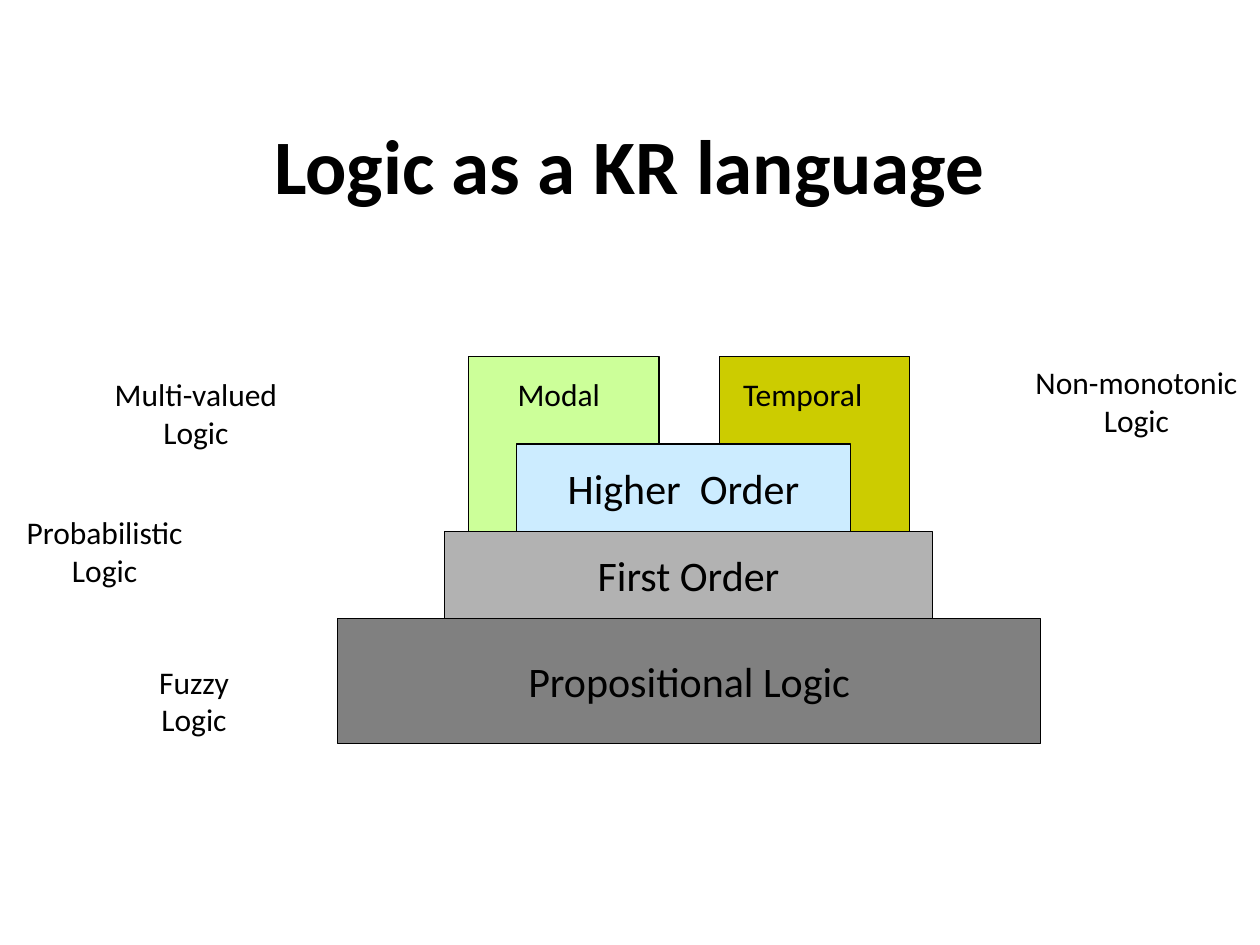
from pptx import Presentation
from pptx.dml.color import RGBColor
from pptx.enum.shapes import MSO_SHAPE as Shape
from pptx.enum.text import MSO_ANCHOR as Anchor, MSO_AUTO_SIZE as AutoSize, PP_ALIGN as Align
from pptx.util import Inches, Pt

BLACK = RGBColor(0x00, 0x00, 0x00)
OLIVE = RGBColor(0xCC, 0xCC, 0x00)
LIME = RGBColor(0xCC, 0xFF, 0x99)
DARK_GRAY = RGBColor(0x80, 0x80, 0x80)
LIGHT_GRAY = RGBColor(0xB2, 0xB2, 0xB2)
SKY = RGBColor(0xCC, 0xEC, 0xFF)

COLUMNS, ROWS = 100, 75  # page grid


def write(frame, text, size=18, bold=False, align=Align.CENTER,
          anchor=Anchor.TOP, wrap=False):
    """Fill a text frame, one paragraph per line of text."""
    frame.word_wrap = wrap
    frame.vertical_anchor = anchor
    for index, line in enumerate(text.split("\n")):
        para = frame.paragraphs[0] if index == 0 else frame.add_paragraph()
        para.alignment = align
        span = para.add_run()
        span.text = line
        span.font.name = "Calibri"
        span.font.size = Pt(size)
        span.font.bold = bold
        span.font.color.rgb = BLACK


class Page:
    """The current slide and its style, measured in grid columns and rows."""

    def __init__(self, deck):
        self.slide = deck.slides.add_slide(deck.slide_layouts[6])
        self.column = deck.slide_width / COLUMNS
        self.row = deck.slide_height / ROWS

    def area(self, left, top, width, height):
        return (round(left * self.column), round(top * self.row),
                round(width * self.column), round(height * self.row))

    def title(self, text, *area):
        box = self.slide.shapes.add_textbox(*self.area(*area))
        write(box.text_frame, text, size=44, bold=True, anchor=Anchor.MIDDLE, wrap=True)

    def label(self, text, *area, align=Align.CENTER):
        box = self.slide.shapes.add_textbox(*self.area(*area))
        write(box.text_frame, text, align=align)
        box.text_frame.auto_size = AutoSize.SHAPE_TO_FIT_TEXT

    def block(self, color, *area, text=""):
        box = self.slide.shapes.add_shape(Shape.RECTANGLE, *self.area(*area))
        box.shadow.inherit = False
        box.fill.solid()
        box.fill.fore_color.rgb = color
        box.line.color.rgb = BLACK
        box.line.width = Pt(0.75)
        if text:
            write(box.text_frame, text, size=24, anchor=Anchor.MIDDLE)


def main():
    deck = Presentation()
    deck.slide_width, deck.slide_height = Inches(10), Inches(7.5)
    page = Page(deck)
    page.title("Logic as a KR language", 7.5, 6.7, 85, 12.5)

    # Towers behind the stack: two layers high, standing on First Order
    layer = 6.93
    base = 49.1
    tower_top = base - 3 * layer
    for color, left in ((OLIVE, 57.1), (LIME, 37.2)):
        page.block(color, left, tower_top, 15.1, 2 * layer)

    # Stack of logics, from the bottom up
    page.block(DARK_GRAY, 26.8, base, 55.8, 9.9, text="Propositional Logic")
    page.block(LIGHT_GRAY, 35.3, base - layer, 38.7, layer, text="First Order")
    page.block(SKY, 41, base - 2 * layer, 26.5, layer, text="Higher  Order")

    # Tower names, with room to stay on one line
    page.label("Modal", 40.1, 29.3, 9, 4, align=Align.LEFT)
    page.label("Temporal", 58, 29.3, 12, 4, align=Align.LEFT)

    # Other logics around the stack
    for name, left, top, width in (("Fuzzy", 11.4, 52.1, 8),
                                   ("Multi-valued", 7.9, 29.3, 15.3),
                                   ("Probabilistic", 0.9, 40.2, 14.8),
                                   ("Non-monotonic", 81, 28.3, 18.4)):
        page.label(f"{name}\nLogic", left, top, width, 7.1)

    deck.save("out.pptx")


if __name__ == "__main__":
    main()
